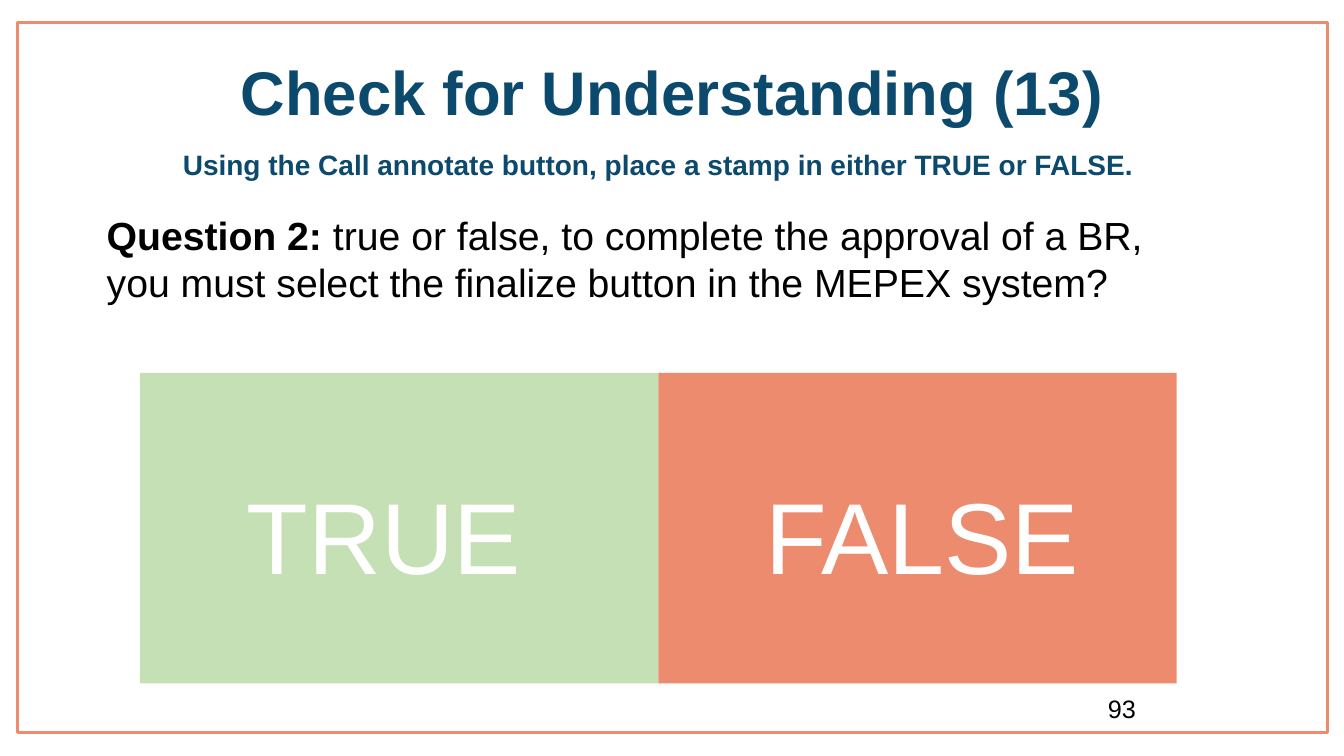
from pptx import Presentation
from pptx.dml.color import RGBColor
from pptx.enum.shapes import MSO_SHAPE
from pptx.enum.text import MSO_ANCHOR, PP_ALIGN
from pptx.util import Inches, Pt

RECTANGLE = MSO_SHAPE.RECTANGLE
TOP, MIDDLE = MSO_ANCHOR.TOP, MSO_ANCHOR.MIDDLE
LEFT, CENTER = PP_ALIGN.LEFT, PP_ALIGN.CENTER

NAVY = RGBColor(0x0C, 0x4A, 0x6D)
CORAL = RGBColor(0xED, 0x8B, 0x6F)
GREEN = RGBColor(0xC5, 0xE0, 0xB4)
BLACK = RGBColor(0, 0, 0)
WHITE = RGBColor(0xFF, 0xFF, 0xFF)

FONT = "Arial"
SLIDE_WIDTH, SLIDE_HEIGHT = 13.33, 7.5
FRAME = (0.17, 0.22, 13, 7.05)
HEADING_HEIGHT = 1.45
ANSWERS = (("TRUE", GREEN), ("FALSE", CORAL))


def add_text(slide, box, runs, size, color=BLACK, align=LEFT, anchor=TOP, line_spacing=1.0):
    """Add a wrapped text box holding one paragraph of (text, bold) runs."""
    shape = slide.shapes.add_textbox(*map(Inches, box))
    frame = shape.text_frame
    frame.word_wrap = True
    frame.vertical_anchor = anchor
    paragraph = frame.paragraphs[0]
    paragraph.alignment = align
    paragraph.line_spacing = line_spacing
    for text, bold in runs:
        run = paragraph.add_run()
        run.text = text
        run.font.name = FONT
        run.font.size = Pt(size)
        run.font.bold = bold
        run.font.color.rgb = color


def add_rectangle(slide, box, fill=None, line=None):
    """Add a flat rectangle with an optional fill and outline colour."""
    shape = slide.shapes.add_shape(RECTANGLE, *map(Inches, box))
    shape.shadow.inherit = False
    if fill is None:
        shape.fill.background()
    else:
        shape.fill.solid()
        shape.fill.fore_color.rgb = fill
    if line is None:
        shape.line.fill.background()
    else:
        shape.line.color.rgb = line
        shape.line.width = Pt(2)


def add_heading(slide, box):
    """Place the title and the instruction under it from the top of the box."""
    left, top, width, _ = box
    heading = {"color": NAVY, "align": CENTER, "anchor": MIDDLE, "line_spacing": 0.9}
    add_text(slide, (left, top, width, HEADING_HEIGHT),
             [("Check for Understanding (13)", True)], 44, **heading)
    add_text(slide, (left - 0.14, top + 0.71, width, HEADING_HEIGHT),
             [("Using the Call annotate button, place a stamp in either TRUE or FALSE.", True)],
             20, **heading)


def add_question(slide, box):
    """Place the question with its bold label in the box."""
    add_text(slide, box, [
        ("Question 2: ", True),
        ("true or false, to complete the approval of a BR, "
         "you must select the finalize button in the MEPEX system?", False),
    ], 28)


def add_answers(slide, box):
    """Split the box into equal coloured panels, one for each answer."""
    left, top, width, height = box
    panel_width = width / len(ANSWERS)
    for column, (answer, color) in enumerate(ANSWERS):
        panel_left = left + column * panel_width
        add_rectangle(slide, (panel_left, top, panel_width, height), fill=color)
        add_text(slide, (panel_left + 0.96, top + 0.95, 3.63, 1.31),
                 [(answer, False)], 72, color=WHITE)


def main():
    """Build the true or false slide and save it."""
    presentation = Presentation()
    presentation.slide_width = Inches(SLIDE_WIDTH)
    presentation.slide_height = Inches(SLIDE_HEIGHT)
    slide = presentation.slides.add_slide(presentation.slide_layouts[6])
    add_rectangle(slide, FRAME, line=CORAL)
    add_heading(slide, FRAME)
    add_question(slide, (0.96, 2.05, 11.15, 1.51))
    add_answers(slide, (1.39, 3.7, 10.28, 3.08))
    add_text(slide, (10.89, 6.83, 2.44, 0.5), [("93", False)], 18)
    presentation.save("out.pptx")


if __name__ == "__main__":
    main()
